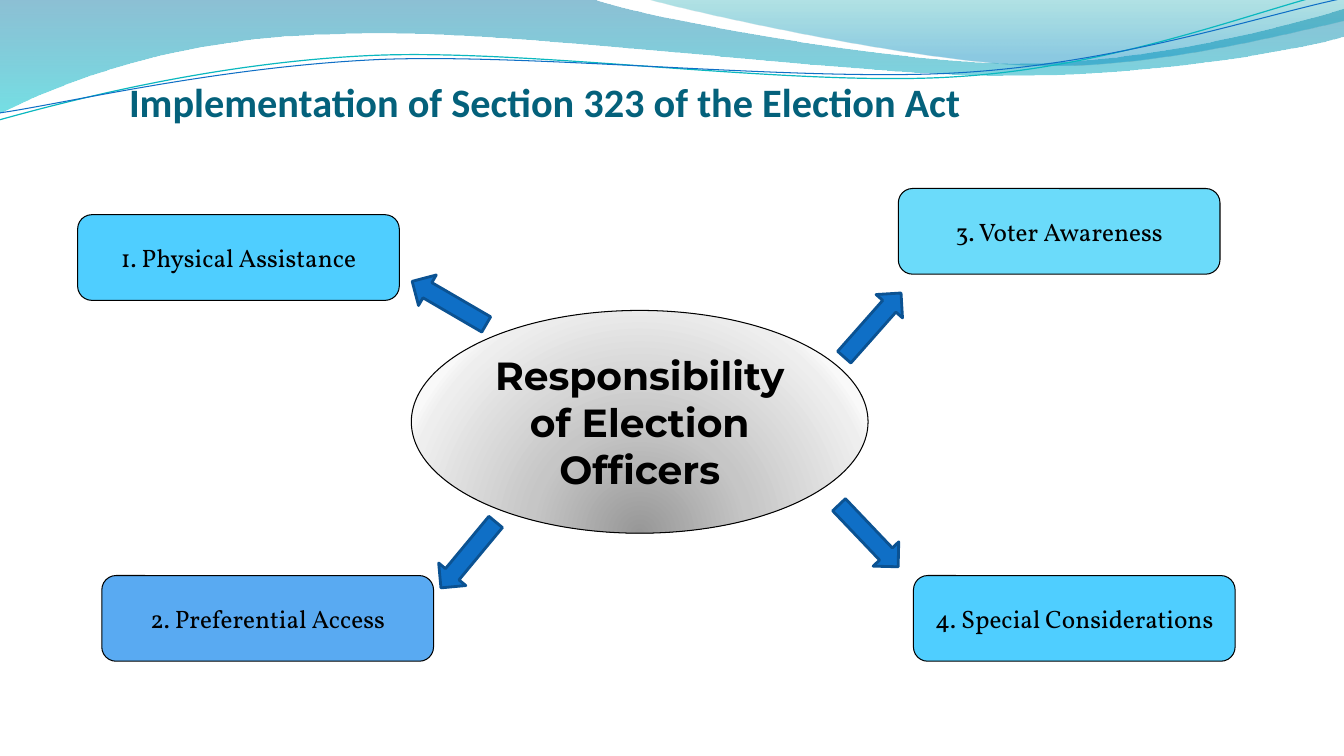
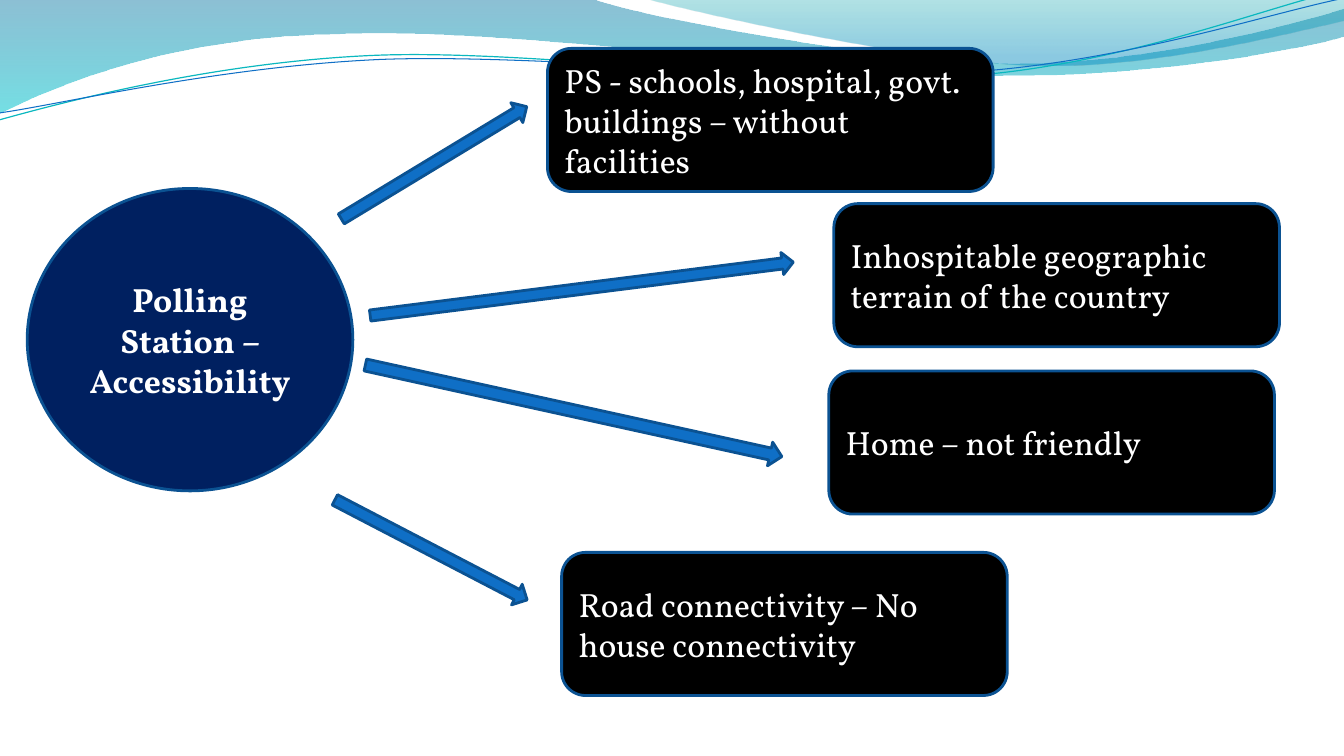
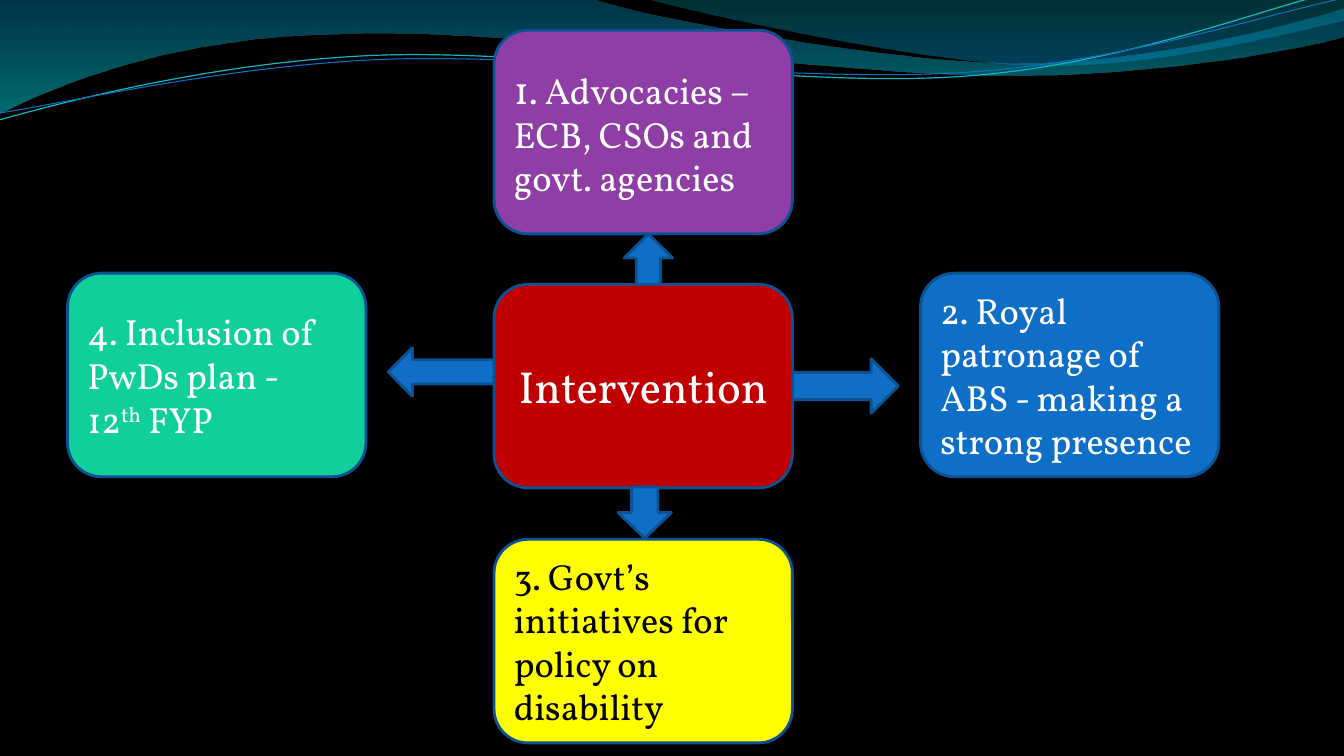
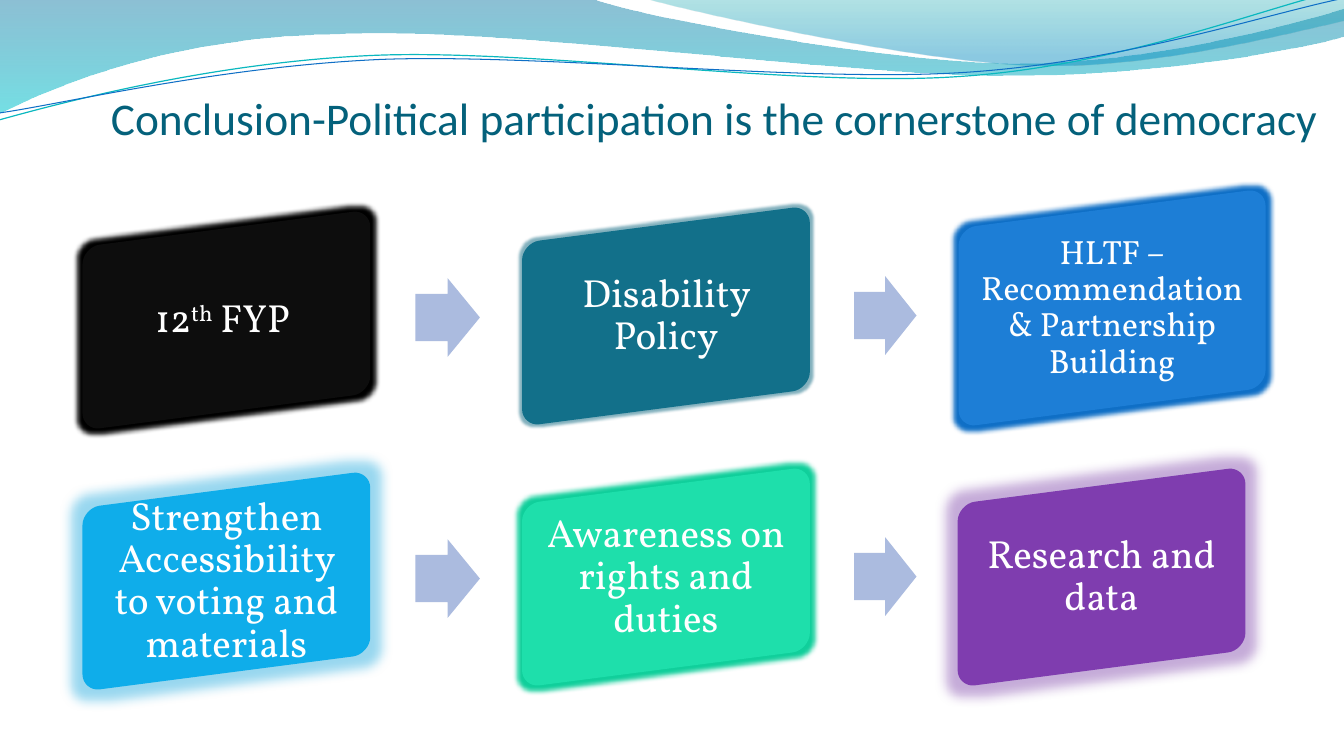
import lxml.etree
import pptx
import pptx.dml.color
import pptx.enum.shapes
import pptx.enum.text
import pptx.oxml.ns
import pptx.util

Inches = pptx.util.Inches
Pt = pptx.util.Pt
SHAPE = pptx.enum.shapes.MSO_SHAPE
ALIGN = pptx.enum.text.PP_ALIGN
ANCHOR = pptx.enum.text.MSO_ANCHOR
qn = pptx.oxml.ns.qn

WHITE, BLACK = "FFFFFF", "000000"
BLUE, DARK_BLUE, TEAL = "0F6FC6", "0B5292", "04617B"
BODY_FONT, TITLE_FONT = "Vollkorn", "Calibri"

# Outlines: a start point, then lines (2 numbers) and cubic curves (6 numbers).
LEFT_WAVE = [
    (0, 0), (5.87, -0.01),
    (6.34, 0.17, 8.85, 0.63, 10.11, 0.63),
    (11.38, 0.63, 12.78, 0.26, 13.33, 0.09),
    (13.35, 0.36),
    (13.11, 0.44, 11.6, 0.76, 9.94, 0.75),
    (8.29, 0.75, 5.09, 0.28, 3.43, 0.34),
    (1.72, 0.36, 0.61, 0.83, -0.01, 1.13),
]
RIGHT_WAVE = [
    (6.39, -0.01),
    (6.79, 0.11, 9.09, 0.62, 10.25, 0.65),
    (11.41, 0.69, 12.82, 0.32, 13.33, 0.21),
    (13.33, 0),
]
TEAL_STRAND = [
    (-0.01, 1.19),
    (0.64, 1.01, 2.11, 0.62, 3.69, 0.55),
    (5.27, 0.48, 7.9, 0.87, 9.5, 0.76),
    (11.1, 0.66, 12.52, 0.08, 13.31, -0.1),
]
BLUE_STRAND = [
    (0, 1.12),
    (0.63, 1.03, 2.18, 0.66, 3.78, 0.59),
    (5.37, 0.53, 7.96, 0.82, 9.55, 0.72),
    (11.15, 0.62, 12.55, 0.14, 13.34, -0.02),
]


def rgb(color):
    return pptx.dml.color.RGBColor.from_string(color)


def paint(shape, fill=None, line=None, weight=2):
    shape.shadow.inherit = False
    if fill:
        shape.fill.solid()
        shape.fill.fore_color.rgb = rgb(fill)
    else:
        shape.fill.background()
    if line:
        shape.line.color.rgb = rgb(line)
        shape.line.width = Pt(weight)
    else:
        shape.line.fill.background()


def add_color(parent, color, alpha=100):
    node = lxml.etree.SubElement(parent, qn("a:srgbClr"), val=color)
    if alpha < 100:
        lxml.etree.SubElement(node, qn("a:alpha"), val=str(alpha * 1000))


def set_gradient(shape, stops, focus=None):
    """Replace a solid fill; focus is the left, top, right, bottom of a circular one."""
    solid = shape._element.spPr.find(qn("a:solidFill"))
    gradient = lxml.etree.Element(qn("a:gradFill"), rotWithShape="1")
    stop_list = lxml.etree.SubElement(gradient, qn("a:gsLst"))
    for position, color, alpha in stops:
        stop = lxml.etree.SubElement(stop_list, qn("a:gs"), pos=str(position * 1000))
        add_color(stop, color, alpha)
    if focus:
        circle = lxml.etree.SubElement(gradient, qn("a:path"), path="circle")
        sides = {side: str(value * 1000) for side, value in zip("ltrb", focus)}
        lxml.etree.SubElement(circle, qn("a:fillToRect"), **sides)
    else:
        lxml.etree.SubElement(gradient, qn("a:lin"), ang="5400000", scaled="1")
    solid.getparent().replace(solid, gradient)


def set_glow(shape, radius, color, alpha):
    effects = shape._element.spPr.find(qn("a:effectLst"))
    glow = lxml.etree.SubElement(effects, qn("a:glow"), rad=str(int(Pt(radius))))
    add_color(glow, color, alpha)


def write(box, text, size, color, font=BODY_FONT, bold=False, align=ALIGN.CENTER,
          inset=(0.1, 0.05), anchor=ANCHOR.MIDDLE, lead_size=None):
    """Fill the box with one paragraph.

    Text between ^ signs is superscript; lead_size sets the first letter apart.
    """
    frame = box.text_frame
    frame.word_wrap = True
    frame.vertical_anchor = anchor
    frame.margin_left = frame.margin_right = Inches(inset[0])
    frame.margin_top = frame.margin_bottom = Inches(inset[1])
    para = frame.paragraphs[0]
    first, *others = text.split("^")
    if lead_size:
        lead = para.add_run()
        lead.text = first[0]
        lead.font.size = Pt(lead_size)
        para.add_run().text = first[1:]
    else:
        para.text = first
    for index, piece in enumerate(others):
        span = para.add_run()
        span.text = piece
        if index % 2 == 0:
            span.font._element.set("baseline", "30000")
    para.alignment = align
    para.font.name = font
    para.font.size = Pt(size)
    para.font.bold = bold
    para.font.color.rgb = rgb(color)
    return para


def add_box(page, kind, at, fill, line=DARK_BLUE, weight=2, rotation=0):
    box = page.shapes.add_shape(kind, *map(Inches, at))
    box.rotation = rotation
    paint(box, fill, line, weight)
    return box


def add_arrow(page, at, rotation=0, kind=SHAPE.DOWN_ARROW):
    return add_box(page, kind, at, BLUE, rotation=rotation)


def add_title(page, text, left, top, size, bold=False):
    box = page.shapes.add_textbox(Inches(left), Inches(top), Inches(12.1), Inches(0.55))
    write(box, text, size, TEAL, TITLE_FONT, bold, ALIGN.LEFT, (0, 0), ANCHOR.TOP)


def add_outline(page, outline, close=True):
    """Draw lines and cubic curves: each curve is first laid out as three lines."""
    points = [(Inches(x), Inches(y))
              for segment in outline for x, y in zip(segment[::2], segment[1::2])]
    builder = page.shapes.build_freeform(*points[0], scale=1.0)
    builder.add_line_segments(points[1:], close=close)
    shape = builder.convert_to_shape()
    lines = iter(list(shape._element.iter(qn("a:lnTo"))))
    for segment in outline[1:]:
        line = next(lines)
        if len(segment) == 6:
            curve = lxml.etree.Element(qn("a:cubicBezTo"))
            line.addprevious(curve)
            for part in (line, next(lines), next(lines)):
                curve.append(part[0])
                part.getparent().remove(part)
    return shape


def add_waves(deck):
    """Put the wave band on the master, behind every page."""
    page = deck.slides[0]
    waves = []
    for outline, stops in (
        (LEFT_WAVE, [(0, "0074A1", 45), (100, "00C6CF", 55)]),
        (RIGHT_WAVE, [(0, "00A1A9", 30), (80, "008BBF", 45)]),
    ):
        wave = add_outline(page, outline)
        paint(wave, BLUE)
        set_gradient(wave, stops)
        waves.append(wave)
    for outline, color, weight in (
        (TEAL_STRAND, "0AB8BF", 0.85), (BLUE_STRAND, BLUE, 0.75),
    ):
        strand = add_outline(page, outline, close=False)
        paint(strand, None, color, weight)
        waves.append(strand)
    for number, wave in enumerate(waves, start=101):
        wave._element.nvSpPr.cNvPr.set("id", str(number))
        deck.slide_master.shapes._spTree.append(wave._element)


def add_page(deck, background=WHITE):
    page = deck.slides.add_slide(deck.slide_layouts[6])
    page.background.fill.solid()
    page.background.fill.fore_color.rgb = rgb(background)
    return page


def add_slanted_card(page, at, fill, text, size, glow):
    """Add a rounded card whose right side is raised."""
    left, top, width, height = at
    center_x, center_y = left + width / 2, top + height / 2
    x, y = 0.453 * width, 0.482 * height
    radius, handle, slope = 0.17, 0.08, 0.13
    straight = [
        (-x, radius - y),
        (-x, handle - y, handle - x, -y, radius - x, -y),
        (x - radius, -y),
        (x - handle, -y, x, handle - y, x, radius - y),
        (x, y - radius),
        (x, y - handle, x - handle, y, x - radius, y),
        (radius - x, y),
        (handle - x, y, -x, y - handle, -x, y - radius),
    ]
    outline = [
        tuple(value
              for across, down in zip(segment[::2], segment[1::2])
              for value in (center_x + across, center_y + down - slope * across))
        for segment in straight
    ]
    card = add_outline(page, outline)
    paint(card, fill)
    set_glow(card, *glow)
    para = write(card, text, size, WHITE, inset=(0.18, 0.18))
    para.line_spacing = 0.9


def build_responsibility(deck):
    page = add_page(deck)
    add_title(page, "Implementation of Section 323 of the Election Act", 1.28, 0.77, 28.8, True)
    hub = add_box(page, SHAPE.OVAL, (4.08, 3.08, 4.53, 2.21), WHITE, BLACK, 0.75)
    set_gradient(hub, [(0, "979797", 100), (43, "C6C6C6", 100), (93, "EEEEEE", 100),
                       (100, "F9F9F9", 100)], (50, 130, 50, -30))
    write(hub, "Responsibility of Election Officers", 28, BLACK, "Montserrat", True)
    for left, top, width, fill, text in (
        (0.77, 2.13, 3.19, "4FCEFF", "1. Physical Assistance"),
        (1.01, 5.71, 3.29, "59AAF2", "2. Preferential Access"),
        (8.91, 1.87, 3.19, "6BDBFA", "3. Voter Awareness"),
        (9.06, 5.71, 3.19, "4FCEFF", "4. Special Considerations"),
    ):
        duty = add_box(page, SHAPE.ROUNDED_RECTANGLE, (left, top, width, 0.85), fill, BLACK, 0.75)
        write(duty, text, 18, BLACK)
    for left, top, rotation in (
        (4.28, 2.58, 120.2), (8.48, 2.8, 221.5), (8.44, 4.89, 316.4), (4.47, 5.08, 39.7),
    ):
        add_arrow(page, (left, top, 0.35, 0.85), rotation)


def build_accessibility(deck):
    page = add_page(deck)
    hub = add_box(page, SHAPE.FLOWCHART_CONNECTOR, (0.27, 1.87, 3.23, 3), "002060")
    write(hub, "Polling Station – Accessibility", 24, WHITE, bold=True)
    for left, top, text in (
        (5.43, 0.48, "PS - schools, hospital, govt. buildings – without facilities"),
        (8.27, 2.02, "Inhospitable geographic terrain of the country"),
        (5.57, 5.48, "Road connectivity – No house connectivity"),
        (8.22, 3.68, "Home – not friendly"),
    ):
        barrier = add_box(page, SHAPE.FLOWCHART_ALTERNATE_PROCESS, (left, top, 4.42, 1.42), BLACK)
        write(barrier, text, 24, WHITE, align=ALIGN.LEFT)
    for left, top, width, length, rotation in (
        (4.19, 0.54, 0.23, 2.15, 238.8), (5.66, 0.75, 0.22, 4.23, 262.8),
        (5.57, 1.96, 0.24, 4.23, 282.4), (4.16, 4.38, 0.23, 2.15, 297.5),
    ):
        add_arrow(page, (left, top, width, length), rotation)


def build_intervention(deck):
    page = add_page(deck, BLACK)
    for left, top, fill, color, size, lead_size, align, text in (
        (4.9, 2.82, "C00000", WHITE, 32, None, ALIGN.CENTER, "Intervention"),
        (0.67, 2.71, "10CF9B", WHITE, 26, None, ALIGN.LEFT,
         "4. Inclusion of PwDs plan -\v12^th^ FYP"),
        (9.13, 2.71, BLUE, WHITE, 25.9, None, ALIGN.LEFT,
         "2. Royal patronage of ABS - making a strong presence"),
        (4.9, 0.3, "8E3EA4", WHITE, 26, 28, ALIGN.LEFT,
         "1. Advocacies – ECB, CSOs and govt. agencies"),
        (4.9, 5.35, "FFFF00", BLACK, 25.9, None, ALIGN.LEFT,
         "3. Govt’s initiatives for policy on disability"),
    ):
        box = add_box(page, SHAPE.ROUNDED_RECTANGLE, (left, top, 2.96, 2.02), fill)
        para = write(box, text, size, color, align=align, lead_size=lead_size)
        para.space_before = Pt(round(0.2 * size))
    add_arrow(page, (7.86, 3.56, 1.05, 0.54), kind=SHAPE.RIGHT_ARROW)
    add_arrow(page, (6.19, 2.32, 0.48, 0.5), kind=SHAPE.UP_ARROW)
    add_arrow(page, (3.85, 3.45, 1.05, 0.48), kind=SHAPE.LEFT_ARROW)
    add_arrow(page, (6.13, 4.83, 0.53, 0.51))


def build_conclusion(deck):
    page = add_page(deck)
    add_title(page, "Conclusion-Political participation is the cornerstone of democracy",
              1.1, 0.89, 32.4)
    normal = (3.15, 1.89)
    for at, fill, text, size, glow in (
        ((0.67, 2.23, *normal), "0D0D0D", "12^th^ FYP ", 28, (7, BLACK, 100)),
        ((5.03, 2.19, *normal), "12708A", "Disability Policy", 28, (4, TEAL, 50)),
        ((9.35, 2.03, 3.36, 2.05), "1D7ED6", "HLTF – Recommendation & Partnership Building", 24,
         (7, BLUE, 100)),
        ((0.67, 4.82, *normal), "0FADEA", "Strengthen Accessibility to voting and materials", 28,
         (16, "009DD9", 40)),
        ((5.03, 4.78, *normal), "1EDFAB", "Awareness on rights and duties", 28,
         (7, "10CF9B", 100)),
        ((9.35, 4.78, *normal), "7F3DAF", "Research and data", 28, (16, "7030A0", 40)),
    ):
        add_slanted_card(page, at, fill, text, size, glow)
    for row in range(2):
        for left, top, width in ((4.12, 2.76, 0.64), (8.47, 2.74, 0.62)):
            arrow = add_box(page, SHAPE.RIGHT_ARROW, (left, top + 2.59 * row, width, 0.78),
                            "ABBBDF", None)
            arrow.adjustments[0] = 0.6


def main():
    deck = pptx.Presentation()
    deck.slide_width, deck.slide_height = Inches(13.33), Inches(7.5)
    build_responsibility(deck)
    build_accessibility(deck)
    build_intervention(deck)
    build_conclusion(deck)
    add_waves(deck)
    deck.save("out.pptx")


if __name__ == "__main__":
    main()
